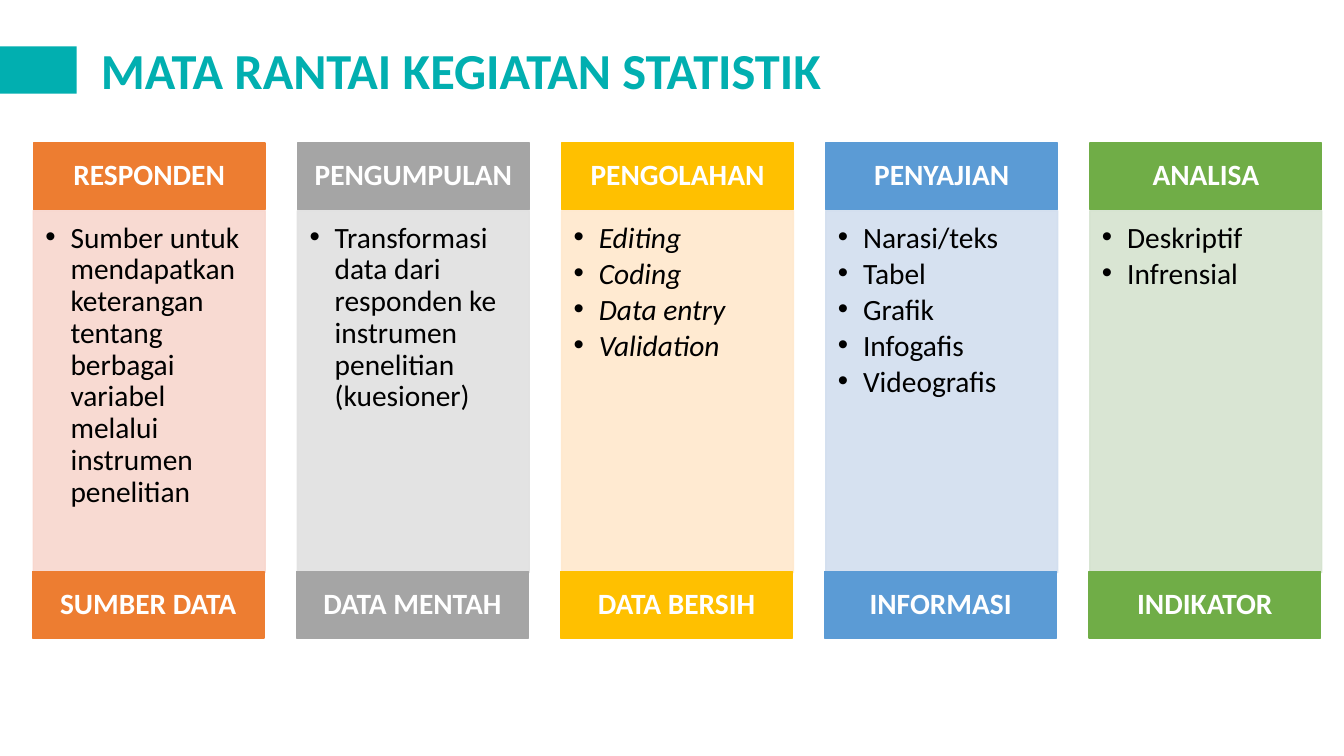
from lxml import etree
from pptx import Presentation
from pptx.dml.color import RGBColor
from pptx.enum.shapes import MSO_SHAPE
from pptx.enum.text import MSO_ANCHOR, MSO_AUTO_SIZE, PP_ALIGN
from pptx.oxml.ns import qn
from pptx.util import Inches, Pt

RECTANGLE = MSO_SHAPE.RECTANGLE
TOP, MIDDLE = MSO_ANCHOR.TOP, MSO_ANCHOR.MIDDLE
LEFT, CENTER = PP_ALIGN.LEFT, PP_ALIGN.CENTER

COLORS = {
    "teal": "01AFB0", "white": "FFFFFF", "black": "000000",
    "orange": "ED7D31", "orange_pale": "F8D7CE",
    "gray": "A5A5A5", "gray_pale": "E1E1E1",
    "gold": "FFC000", "gold_pale": "FFE8CC",
    "blue": "5B9BD5", "blue_pale": "D2DEEF",
    "green": "70AD47", "green_pale": "D5E3CF",
}
STAGES = [
    ("RESPONDEN", "orange", "SUMBER DATA",
     ["Sumber untuk mendapatkan keterangan tentang berbagai variabel melalui instrumen penelitian"]),
    ("PENGUMPULAN", "gray", "DATA MENTAH",
     ["Transformasi data dari responden ke instrumen penelitian (kuesioner)"]),
    ("PENGOLAHAN", "gold", "DATA BERSIH",
     ["Editing", "Coding", "Data entry", "Validation"]),
    ("PENYAJIAN", "blue", "INFORMASI",
     ["Narasi/teks", "Tabel", "Grafik", "Infogafis", "Videografis"]),
    ("ANALISA", "green", "INDIKATOR", ["Deskriptif", "Infrensial"]),
]


def add_block(left, top, width, height, color, opacity=100):
    block = page.shapes.add_shape(
        RECTANGLE, Inches(left), Inches(top), Inches(width), Inches(height))
    block.shadow.inherit = False
    block.line.width = Pt(1)
    block.line.fill.solid()
    block.fill.solid()
    for fill in (block.fill, block.line.fill):
        fill.fore_color.rgb = RGBColor.from_string(COLORS[color])
    if opacity < 100:
        for tint in block.fill._xPr.iter(qn("a:srgbClr")):
            etree.SubElement(tint, qn("a:alpha"), val=str(opacity * 1000))
    return block


def write(box, lines, size=21, color="white", bold=False, italic=False, align=CENTER,
          anchor=MIDDLE, insets=(0.16, 0.09, 0.16, 0.09), spacing=0.9, bullets=False, wrap=True):
    frame = box.text_frame
    frame.auto_size = MSO_AUTO_SIZE.NONE
    frame.word_wrap = wrap
    frame.vertical_anchor = anchor
    frame.margin_left, frame.margin_top, frame.margin_right, frame.margin_bottom = map(Inches, insets)
    for index, line in enumerate(lines):
        para = frame.add_paragraph() if index else frame.paragraphs[0]
        para.alignment = align
        para.line_spacing = spacing
        if bullets:
            para.space_after = Pt(3)
            properties = para._p.get_or_add_pPr()
            properties.set("marL", str(Inches(0.25)))
            properties.set("indent", str(-Inches(0.25)))
            etree.SubElement(properties, qn("a:buFont"), typeface="Arial")
            etree.SubElement(properties, qn("a:buChar"), char="•")
        span = para.add_run()
        span.text = line
        span.font.name = "Calibri"
        span.font.size = Pt(size)
        span.font.bold = bold
        span.font.italic = italic
        span.font.color.rgb = RGBColor.from_string(COLORS[color])


deck = Presentation()
deck.slide_width, deck.slide_height = Inches(13.33), Inches(7.5)
page = deck.slides.add_slide(deck.slide_layouts[5])

accent = add_block(0, 0.46, 0.76, 0.47, "teal")
accent.line.fill.background()

title = page.shapes.title
title.left, title.top = Inches(0.9), Inches(0.34)
title.width, title.height = Inches(7.43), Inches(0.71)
write(title, ["MATA RANTAI KEGIATAN STATISTIK"], size=36, color="teal", bold=True,
      align=LEFT, anchor=TOP, insets=(0.1, 0.05, 0.1, 0.05), spacing=1.0, wrap=False)

for column, (stage, color, result, details) in enumerate(STAGES):
    left = 0.33 + column * 2.62
    header = add_block(left, 1.42, 2.3, 0.66, color)
    write(header, [stage], bold=True)
    body = add_block(left, 2.09, 2.3, 3.59, color + "_pale", opacity=90)
    write(body, details, color="black", italic=stage == "PENGOLAHAN", align=LEFT,
          anchor=TOP, insets=(0.12, 0.12, 0.16, 0.18), bullets=True)
    footer = add_block(left - 0.01, 5.67, 2.3, 0.66, color)
    write(footer, [result], bold=True)

deck.save("out.pptx")
